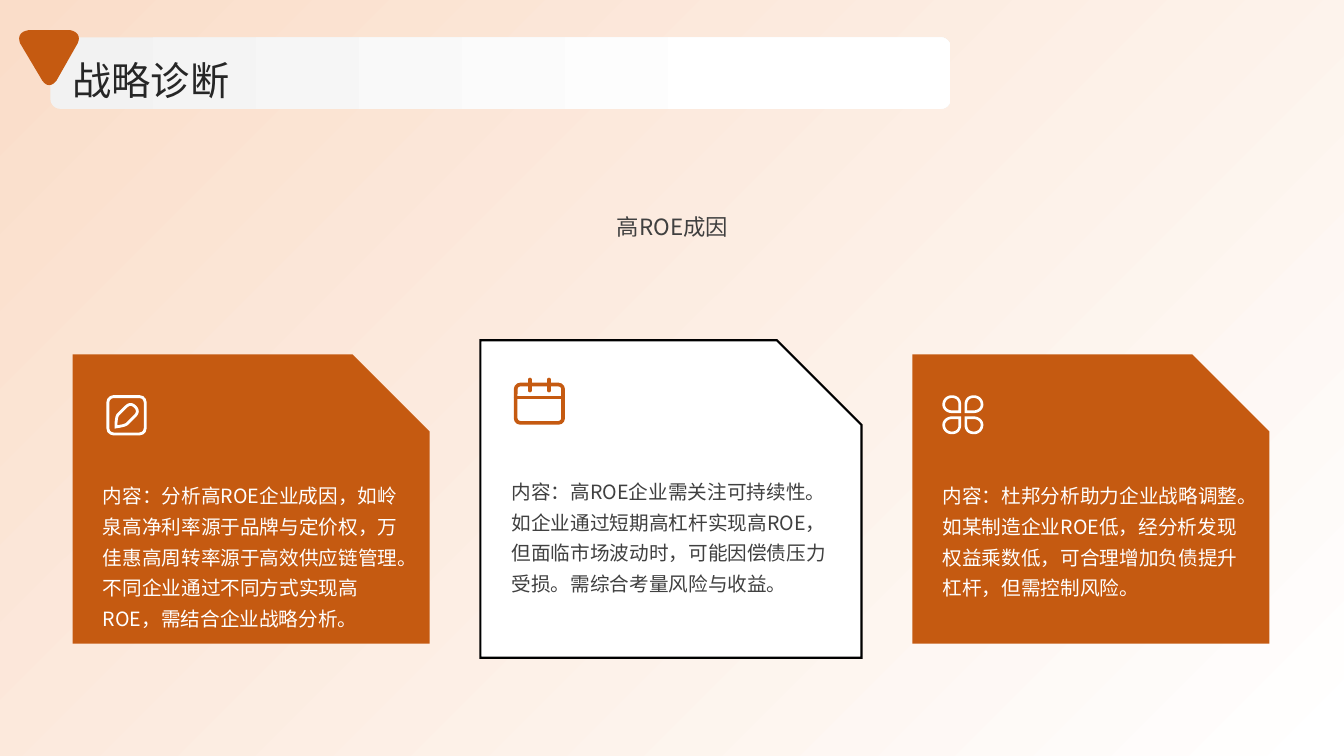
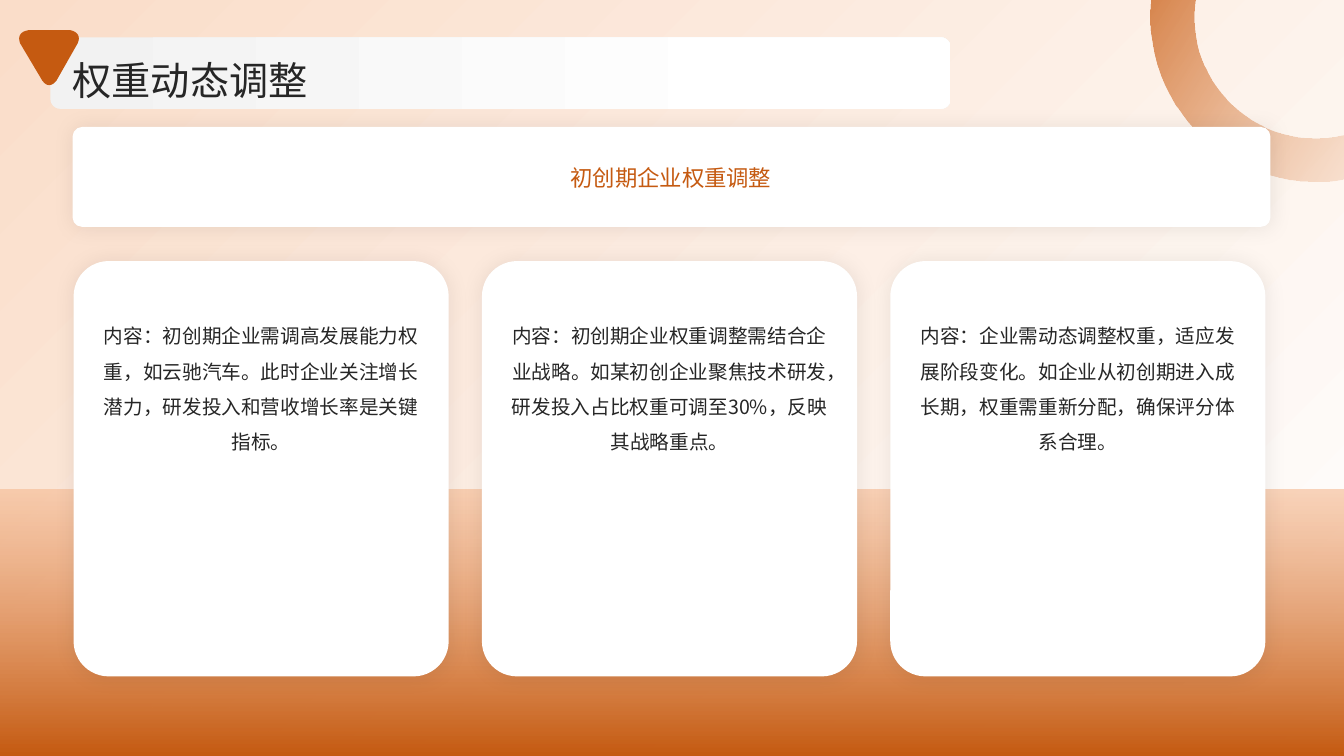
from lxml import etree
from pptx import Presentation
from pptx import util as u
from pptx.dml.color import RGBColor
from pptx.enum import shapes, text
from pptx.oxml.ns import qn

WIDTH, HEIGHT = 13.33, 7.5
FONT = "Noto Sans CJK SC"
COLORS = {
    "white": "FFFFFF", "black": "000000", "peach": "FADDC9", "apricot": "F6BA92",
    "orange": "C55A11", "mist": "F2F2F2", "ink": "262626", "gray": "404040",
}
MARGIN = 0.72

DIAGNOSIS = {
    "title": "战略诊断",
    "heading": "高ROE成因",
    "cards": [
        "内容：分析高ROE企业成因，如岭泉高净利率源于品牌与定价权，万佳惠高周转率源于高效供应链管理。不同企业通过不同方式实现高ROE，需结合企业战略分析。",
        "内容：高ROE企业需关注可持续性。如企业通过短期高杠杆实现高ROE，但面临市场波动时，可能因偿债压力受损。需综合考量风险与收益。",
        "内容：杜邦分析助力企业战略调整。如某制造企业ROE低，经分析发现权益乘数低，可合理增加负债提升杠杆，但需控制风险。",
    ],
}
WEIGHTS = {
    "title": "权重动态调整",
    "heading": "初创期企业权重调整",
    "cards": [
        "内容：初创期企业需调高发展能力权重，如云驰汽车。此时企业关注增长潜力，研发投入和营收增长率是关键指标。",
        "内容：初创期企业权重调整需结合企业战略。如某初创企业聚焦技术研发，研发投入占比权重可调至30%，反映其战略重点。",
        "内容：企业需动态调整权重，适应发展阶段变化。如企业从初创期进入成长期，权重需重新分配，确保评分体系合理。",
    ],
}

TRIANGLE = [
    [(0.28, 0.3)], [(0.7, 0.3)], [(0.7, 0.3), (0.82, 0.32), (0.77, 0.43)],
    [(0.56, 0.8)], [(0.56, 0.8), (0.49, 0.9), (0.42, 0.8)],
    [(0.2, 0.43)], [(0.2, 0.43), (0.15, 0.32), (0.28, 0.3)],
]
PEN = [
    [(0.1, 0.31)], [(0.1, 0.31), (0.1, 0.21), (0.12, 0.19)],
    [(0.2, 0.11)], [(0.23, 0.08), (0.26, 0.08), (0.29, 0.11)],
    [(0.32, 0.14), (0.32, 0.17), (0.29, 0.2)],
    [(0.21, 0.28)], [(0.19, 0.3), (0.1, 0.31), (0.1, 0.31)],
]
PETAL = [
    [(0.03, 0.03)], [(0.03, 0.1)],
    [(0.03, 0.15), (0.06, 0.18), (0.11, 0.18)],
    [(0.15, 0.18), (0.19, 0.15), (0.19, 0.1)],
    [(0.19, 0.06), (0.15, 0.03), (0.11, 0.03)],
]


def rgb(name):
    return RGBColor.from_string(COLORS[name])


def color_element(parent, name, alpha):
    color = etree.SubElement(parent, qn("a:srgbClr"), val=COLORS[name])
    if alpha < 100:
        etree.SubElement(color, qn("a:alpha"), val=str(alpha * 1000))


def fill_gradient(shape, stops, angle):
    shape.fill.background()
    properties = shape.element.spPr
    gradient = etree.Element(qn("a:gradFill"), rotWithShape="1")
    stop_list = etree.SubElement(gradient, qn("a:gsLst"))
    for position, name, alpha in stops:
        stop = etree.SubElement(stop_list, qn("a:gs"), pos=str(position * 1000))
        color_element(stop, name, alpha)
    etree.SubElement(gradient, qn("a:lin"), ang=str(angle * 60000), scaled="0")
    properties.replace(properties.find(qn("a:noFill")), gradient)


def paint(shape, fill=None, line=None, width=1.5):
    shape.shadow.inherit = False
    if fill:
        shape.fill.solid()
        shape.fill.fore_color.rgb = rgb(fill)
    else:
        shape.fill.background()
    if line:
        shape.line.color.rgb = rgb(line)
        shape.line.width = u.Pt(width)
        etree.SubElement(shape.element.spPr.find(qn("a:ln")), qn("a:miter"), lim="800000")
    else:
        shape.line.fill.background()


def add_shape(slide, kind, box, fill=None, line=None, width=1.5, adjust=None):
    shape = slide.shapes.add_shape(kind, *map(u.Inches, box))
    paint(shape, fill, line, width)
    if adjust is not None:
        shape.adjustments[0] = adjust
    return shape


def trace(segments):
    points = [segments[0][0]]
    for segment in segments[1:]:
        if len(segment) == 1:
            points.append(segment[0])
            continue
        controls = [points[-1], *segment]
        for step in range(1, 13):
            t = step / 12
            shares = ((1 - t) ** 3, 3 * t * (1 - t) ** 2, 3 * t * t * (1 - t), t ** 3)
            points.append(tuple(sum(s * c[axis] for s, c in zip(shares, controls)) for axis in (0, 1)))
    return points


def add_outline(slide, contours, left=0, top=0, **style):
    builder = None
    for contour in contours:
        points = [(u.Inches(left + x), u.Inches(top + y)) for x, y in trace(contour)]
        if builder:
            builder.move_to(*points[0])
        else:
            builder = slide.shapes.build_freeform(*points[0])
        builder.add_line_segments(points[1:], close=True)
    paint(builder.convert_to_shape(), **style)


def add_line(slide, start, end, color, width):
    line = slide.shapes.add_connector(shapes.MSO_CONNECTOR.STRAIGHT, *map(u.Inches, (*start, *end)))
    line.line.color.rgb = rgb(color)
    line.line.width = u.Pt(width)
    properties = line.element.spPr
    properties.find(qn("a:ln")).set("cap", "rnd")
    etree.SubElement(properties, qn("a:effectLst"))


def add_text(slide, box, words, size, color, spacing, centered=False, middle=False, inset=(0, 0)):
    frame = slide.shapes.add_textbox(*map(u.Inches, box)).text_frame
    frame.word_wrap = True
    frame.margin_left = frame.margin_right = u.Inches(inset[0])
    frame.margin_top = frame.margin_bottom = u.Inches(inset[1])
    frame.vertical_anchor = text.MSO_ANCHOR.MIDDLE if middle else text.MSO_ANCHOR.TOP
    paragraph = frame.paragraphs[0]
    paragraph.alignment = text.PP_ALIGN.CENTER if centered else text.PP_ALIGN.LEFT
    paragraph.line_spacing = spacing
    run = paragraph.add_run()
    run.text = words
    run.font.size = u.Pt(size)
    run.font.color.rgb = rgb(color)
    run.font.name = FONT
    properties = run.font._element
    properties.set("lang", "zh-CN")
    etree.SubElement(properties, qn("a:ea"), typeface=FONT)


def add_background(presentation):
    slide = presentation.slides.add_slide(presentation.slide_layouts[6])
    backdrop = add_shape(slide, shapes.MSO_SHAPE.RECTANGLE, (0, 0, WIDTH, HEIGHT))
    fill_gradient(backdrop, [(0, "white", 100), (100, "peach", 100)], 225)
    return slide


def add_title(slide, title):
    band = add_shape(slide, shapes.MSO_SHAPE.ROUNDED_RECTANGLE, (0.5, 0.37, 8.93, 0.71), adjust=0.14)
    fill_gradient(band, [(0, "mist", 100), (80, "white", 100)], 0)
    add_text(slide, (MARGIN, 0.51, 11.67, 0.51), title, 28, "ink", 1.1, middle=True)
    add_outline(slide, [TRIANGLE], fill="orange")


def add_pen_icon(slide, left, top, color):
    frame = (left + 0.02, top + 0.01, 0.37, 0.37)
    add_shape(slide, shapes.MSO_SHAPE.ROUNDED_RECTANGLE, frame, line=color, width=2, adjust=0.15)
    add_outline(slide, [PEN], left, top, line=color, width=2)


def add_calendar_icon(slide, left, top, color):
    frame = (left + 0.02, top + 0.07, 0.47, 0.38)
    add_shape(slide, shapes.MSO_SHAPE.ROUNDED_RECTANGLE, frame, line=color, width=2.6, adjust=0.12)
    add_line(slide, (left + 0.02, top + 0.2), (left + 0.49, top + 0.2), color, 2.6)
    for x in (left + 0.16, left + 0.35):
        add_line(slide, (x, top + 0.02), (x, top + 0.13), color, 2.6)


def add_petal_icon(slide, left, top, color):
    petals = [
        [[(0.2 + across * x, 0.19 + down * y) for x, y in segment] for segment in PETAL]
        for across in (-1, 1) for down in (-1, 1)
    ]
    add_outline(slide, petals, left, top, line=color, width=1.9)


def build_diagnosis(presentation):
    slide = add_background(presentation)
    styles = [
        (3.54, 2.87, "orange", None, "white", add_pen_icon, (0.33, 0.41), (0.3, 1.22)),
        (3.78, 3.15, "white", "black", "gray", add_calendar_icon, (0.33, 0.37), (0.31, 1.32)),
        (3.54, 2.87, "orange", None, "white", add_petal_icon, (0.3, 0.41), (0.3, 1.22)),
    ]
    left, right, center = MARGIN, 12.59, 4.95
    gap = (right - left - sum(style[0] for style in styles)) / 2
    for words, style in zip(DIAGNOSIS["cards"], styles):
        width, height, fill, line, color, add_icon, (icon_x, icon_y), (text_x, text_y) = style
        top = center - height / 2
        add_shape(slide, shapes.MSO_SHAPE.SNIP_1_RECTANGLE, (left, top, width, height), fill, line, adjust=4 / 15)
        add_icon(slide, left + icon_x, top + icon_y, "orange" if fill == "white" else "white")
        add_text(slide, (left + text_x, top + text_y, width * 5 / 6, height / 2), words, 14, color, 1.3)
        left += width + gap
    add_text(slide, (0.74, 2.03, 11.86, 0.94), DIAGNOSIS["heading"], 16, "gray", 1.3, centered=True)
    add_title(slide, DIAGNOSIS["title"])


def add_panel(slide, box):
    panel = add_shape(slide, shapes.MSO_SHAPE.ROUNDED_RECTANGLE, box, "white", adjust=3 / 32)
    effects = panel.element.spPr.find(qn("a:effectLst"))
    shadow = etree.SubElement(effects, qn("a:outerShdw"), blurRad=str(u.Pt(15)), dist="0", algn="ctr", rotWithShape="0")
    color_element(shadow, "black", 8)


def build_weights(presentation):
    slide = add_background(presentation)
    ring = add_shape(slide, shapes.MSO_SHAPE.DONUT, (11.41, -1.47, 3.27, 3.27), adjust=2 / 15)
    ring.rotation = 256.7
    fill_gradient(ring, [(0, "apricot", 0), (100, "orange", 100)], 315)
    floor = add_shape(slide, shapes.MSO_SHAPE.RECTANGLE, (0, 4.86, WIDTH, HEIGHT - 4.86))
    fill_gradient(floor, [(0, "apricot", 61), (100, "orange", 100)], 90)
    width, gap = 3.72, 0.33
    for index, words in enumerate(WEIGHTS["cards"]):
        left = 0.73 + index * (width + gap)
        add_panel(slide, (left, 2.59, width, 4.12))
        add_text(slide, (left + 0.19, 3.05, width - 0.38, 3.35), words, 14, "ink", 1.5, True, inset=(0.1, 0.05))
    add_panel(slide, (MARGIN, 1.26, 11.88, 0.99))
    add_text(slide, (0.98, 1.55, 11.35, 0.41), WEIGHTS["heading"], 16, "orange", 1.1, True, inset=(0.1, 0.05))
    add_title(slide, WEIGHTS["title"])


def main():
    presentation = Presentation()
    presentation.slide_width = u.Inches(WIDTH)
    presentation.slide_height = u.Inches(HEIGHT)
    build_diagnosis(presentation)
    build_weights(presentation)
    presentation.save("out.pptx")


if __name__ == "__main__":
    main()
